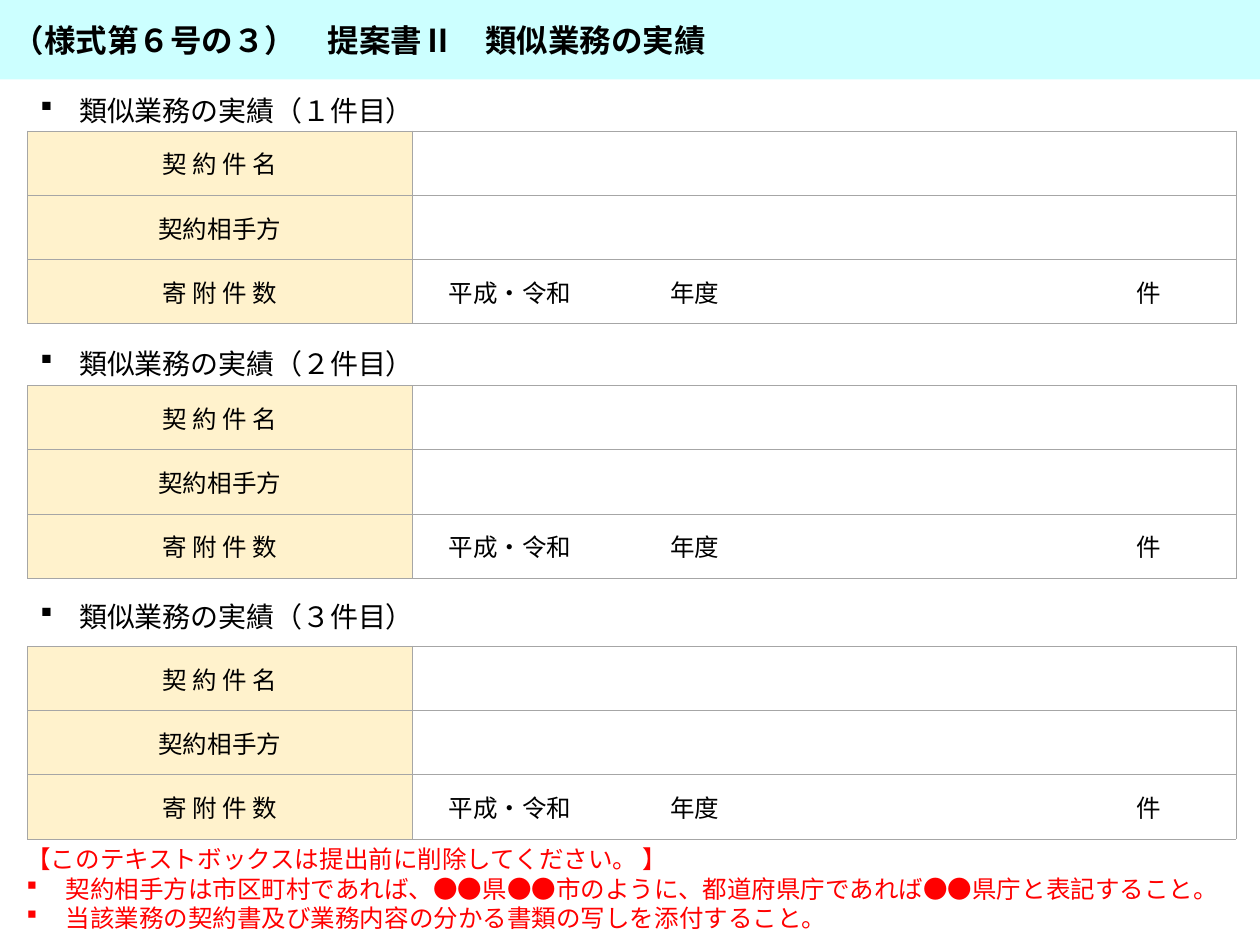
from lxml.etree import SubElement as Sub
from pptx import Presentation
from pptx.dml.color import RGBColor as RGB
from pptx.enum.text import MSO_ANCHOR as Anchor, MSO_AUTO_SIZE as Fit, PP_ALIGN as Align
from pptx.oxml.ns import qn
from pptx.util import Inches, Pt

THEME = {
    "font": "Noto Sans CJK JP",
    "ink": "000000", "note": "FF0000", "band": "CCFFFF",
    "label": "FFF2CC", "blank": "FFFFFF", "rule": "A6A6A6",
    "title": 18, "head": 16, "text": 14, "line": 0.5,
}


def write(para, text, size, ink="ink", bold=False, align=Align.LEFT):
    run = para.add_run()
    run.text = text
    form = {"name": THEME["font"], "size": Pt(THEME[size]), "bold": bold}
    for key, value in form.items():
        setattr(run.font, key, value)
    run.font.color.rgb = RGB.from_string(THEME[ink])
    Sub(run.font._element, qn("a:ea"), typeface=THEME["font"])
    para.alignment = align
    para.space_before = Pt(0)


def mark(para, bullet=True):
    props = para._p.get_or_add_pPr()
    indent = Inches(0.31) if bullet else 0
    props.set("marL", str(indent))
    props.set("indent", str(-indent))
    if bullet:
        Sub(props, qn("a:buFont"), typeface="Wingdings")
        Sub(props, qn("a:buChar"), char="§")
    else:
        Sub(props, qn("a:buNone"))


deck = Presentation()
deck.slide_width, deck.slide_height = Inches(10), Inches(7.5)
slide = deck.slides.add_slide(deck.slide_layouts[1])
title, body = slide.shapes.title, slide.placeholders[1]

for shape, box, anchor in (
    (title, (0, 0, 10, 0.63), Anchor.MIDDLE),
    (body, (0.11, 6.65, 10, 0.81), Anchor.TOP),
):
    for key, value in zip(("left", "top", "width", "height"), box):
        setattr(shape, key, Inches(value))
    form = {"word_wrap": True, "auto_size": Fit.NONE, "vertical_anchor": anchor}
    for key, value in form.items():
        setattr(shape.text_frame, key, value)

title.fill.solid()
title.fill.fore_color.rgb = RGB.from_string(THEME["band"])
write(title.text_frame.paragraphs[0], "（様式第６号の３）　提案書Ⅱ　類似業務の実績", "title", bold=True)

notes = (
    "【このテキストボックスは提出前に削除してください。 】",
    "契約相手方は市区町村であれば、●●県●●市のように、都道府県庁であれば●●県庁と表記すること。",
    "当該業務の契約書及び業務内容の分かる書類の写しを添付すること。",
)
for i, note in enumerate(notes):
    para = body.text_frame.paragraphs[0] if i == 0 else body.text_frame.add_paragraph()
    write(para, note, "text", "note")
    mark(para, i > 0)

rows = (("契 約 件 名", ""), ("契約相手方", ""), ("寄 附 件 数", "平成・令和\t年度\t件"))
for i, (num, top) in enumerate(zip("１２３", (1.04, 3.06, 5.13))):
    head = slide.shapes.add_textbox(Inches(0.22), Inches(0.69 + 2.01 * i), Inches(9.78), Inches(0.37))
    head.text_frame.word_wrap = True
    para = head.text_frame.paragraphs[0]
    write(para, f"類似業務の実績（{num}件目）", "head")
    mark(para)

    frame = slide.shapes.add_table(3, 2, Inches(0.22), Inches(top), Inches(9.59), Inches(1.53))
    table = frame.table
    table.first_row = table.horz_banding = False
    for col, width in zip(table.columns, (3.05, 6.54)):
        col.width = Inches(width)
    for r, texts in enumerate(rows):
        table.rows[r].height = Inches(0.51)
        for c, text in enumerate(texts):
            cell = table.cell(r, c)
            left, right = ((0.06, 0.06), (0.29, 0.1))[c]
            form = {
                "vertical_anchor": Anchor.MIDDLE,
                "margin_left": Inches(left), "margin_right": Inches(right),
                "margin_top": 0, "margin_bottom": 0,
            }
            for key, value in form.items():
                setattr(cell, key, value)
            props = cell._tc.get_or_add_tcPr()
            for side in ("lnL", "lnR", "lnT", "lnB"):
                edge = Sub(props, qn(f"a:{side}"), w=str(Pt(THEME["line"])))
                Sub(Sub(edge, qn("a:solidFill")), qn("a:srgbClr"), val=THEME["rule"])
            cell.fill.solid()
            cell.fill.fore_color.rgb = RGB.from_string(THEME[("label", "blank")[c]])
            if text:
                para = cell.text_frame.paragraphs[0]
                write(para, text, "text", align=(Align.CENTER, Align.LEFT)[c])
                if c == 1:
                    tabs = Sub(para._p.get_or_add_pPr(), qn("a:tabLst"))
                    for stop in (1.76, 5.46):
                        Sub(tabs, qn("a:tab"), pos=str(Inches(stop)), algn="l")

deck.save("out.pptx")
